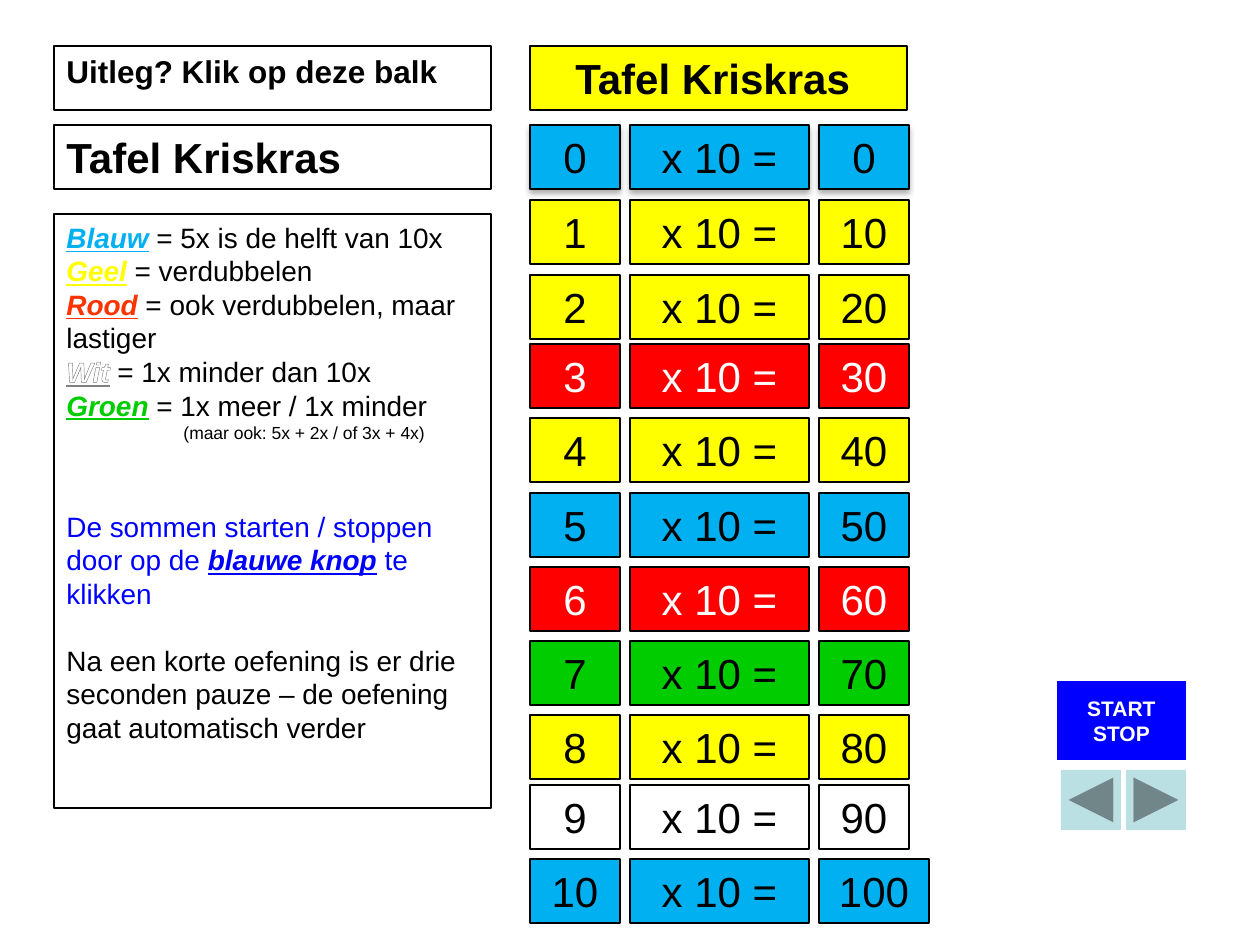
from lxml.etree import SubElement
from pptx import Presentation
from pptx.dml.color import RGBColor
from pptx.enum.shapes import MSO_SHAPE
from pptx.enum.text import MSO_ANCHOR, PP_ALIGN
from pptx.oxml import parse_xml
from pptx.oxml.ns import qn, nsdecls
from pptx.util import Emu, Pt

SCALE = 914400 / 126
HUES = {
    "blue": "00B0F0", "yellow": "FFFF00", "red": "FF0000", "green": "00CC00",
    "white": "FFFFFF", "black": "000000", "rust": "FF3300", "navy": "0000FF",
    "mint": "BBE0E3", "gray": "808080",
}
ROWS = [
    (125, "blue"), (200, "yellow"), (275, "yellow"), (344, "red"),
    (418, "yellow"), (493, "blue"), (567, "red"), (641, "green"),
    (715, "yellow"), (785, "white"), (859, "blue"),
]
NOTES = [
    (0, 0, [("Blauw", "blue", True, 16), (" = 5x is de helft van 10x", "black", False, 16)]),
    (0, 0, [("Geel", "yellow", True, 16), (" = verdubbelen", "black", False, 16)]),
    (0, 0, [("Rood", "rust", True, 16),
            (" = ook verdubbelen, maar lastiger", "black", False, 16)]),
    (0, 0, [("Wit", "white", True, 16), (" = 1x minder dan 10x", "black", False, 16)]),
    (0, 0, [("Groen", "green", True, 16), (" = 1x meer / 1x minder", "black", False, 16)]),
    (0, 117, [("(maar ook: 5x + 2x / of 3x + 4x)", "black", False, 10)]),
    (38, 0, [("De sommen starten / stoppen door op de ", "navy", False, 16),
             ("blauwe knop", "navy", True, 16), (" te klikken", "navy", False, 16)]),
    (19, 0, [("Na een korte oefening is er drie seconden pauze – de oefening "
              "gaat automatisch verder", "black", False, 16)]),
]


def px(num):
    return Emu(round(num * SCALE))


def color(name):
    return RGBColor.from_string(HUES[name])


def place(shape, left, top, width, height):
    shape.left, shape.top = px(left), px(top)
    shape.width, shape.height = px(width), px(height)


def paint(shape, fill, line=0.75):
    if fill:
        shape.fill.solid()
        shape.fill.fore_color.rgb = color(fill)
    else:
        shape.fill.background()
    if line:
        shape.line.color.rgb = color("black")
        shape.line.width = Pt(line)
    else:
        shape.line.fill.background()


def style(run, size, hue, bold=False):
    font = run.font
    font.name, font.size, font.bold = "Arial", Pt(size), bold
    font.color.rgb = color(hue)


def write(shape, text, size, hue="black", bold=False, align=PP_ALIGN.CENTER,
          anchor=MSO_ANCHOR.TOP):
    frame = shape.text_frame
    frame.text = text
    frame.word_wrap = True
    frame.vertical_anchor = anchor
    for para in frame.paragraphs:
        para.alignment = align
        for run in para.runs:
            style(run, size, hue, bold)


def add_box(slide, area, fill, line=0.75, kind=MSO_SHAPE.RECTANGLE):
    shape = slide.shapes.add_shape(kind, *map(px, area))
    shape.shadow.inherit = False
    paint(shape, fill, line)
    return shape


def add_shade(shape):
    props = shape.element.spPr
    props.remove(props.find(qn("a:effectLst")))
    props.append(parse_xml(
        f'<a:effectLst {nsdecls("a")}>'
        '<a:outerShdw blurRad="44450" dist="27940" dir="5400000" rotWithShape="0">'
        f'<a:srgbClr val="{HUES["black"]}"><a:alpha val="32000"/></a:srgbClr>'
        '</a:outerShdw></a:effectLst>'))


def add_rim(run):
    line = parse_xml(f'<a:ln {nsdecls("a")} w="12700"/>')
    fill = SubElement(line, qn("a:solidFill"))
    SubElement(fill, qn("a:srgbClr"), val=HUES["gray"])
    run.font._element.insert(0, line)


def add_title(slide):
    title = slide.shapes.title
    place(title, 530, 46, 377, 64)
    paint(title, "yellow")
    write(title, "Tafel Kriskras ", 24, bold=True)


def add_sums(slide):
    for num, (top, fill) in enumerate(ROWS):
        total = num * 10
        wide = 110 if total == 100 else 90
        hue = "white" if fill == "red" else "black"
        cells = [(530, 90, str(num)), (630, 179, "x 10 ="), (819, wide, str(total))]
        for left, width, text in cells:
            box = add_box(slide, (left, top, width, 64), fill)
            write(box, text, 24, hue)
            if num == 0:
                add_shade(box)


def add_notes(slide):
    box = add_box(slide, (54, 214, 437, 594), "white", 1.5)
    frame = box.text_frame
    frame.word_wrap = True
    frame.vertical_anchor = MSO_ANCHOR.TOP
    for spot, (gap, indent, parts) in enumerate(NOTES):
        para = frame.add_paragraph() if spot else frame.paragraphs[0]
        para.alignment = PP_ALIGN.LEFT
        para.space_before = Pt(gap)
        if indent:
            para._p.get_or_add_pPr().set("marL", str(px(indent)))
        for text, hue, strong, size in parts:
            run = para.add_run()
            run.text = text
            style(run, size, hue, strong)
            run.font.italic = run.font.underline = strong
            if hue == "white":
                add_rim(run)


def add_keys(slide):
    start = add_box(slide, (1057, 681, 129, 79), "navy", 0,
                    MSO_SHAPE.ACTION_BUTTON_CUSTOM)
    write(start, "START\nSTOP", 12, "white", True, anchor=MSO_ANCHOR.MIDDLE)
    start.text_frame.word_wrap = False
    arrows = [(1061, MSO_SHAPE.ACTION_BUTTON_BACK_OR_PREVIOUS),
              (1126, MSO_SHAPE.ACTION_BUTTON_FORWARD_OR_NEXT)]
    for left, kind in arrows:
        add_box(slide, (left, 770, 60, 60), "mint", 0, kind)


def main():
    deck = Presentation()
    deck.slide_width, deck.slide_height = px(1260), px(945)
    slide = deck.slides.add_slide(deck.slide_layouts[5])
    add_title(slide)
    add_sums(slide)
    add_notes(slide)
    heads = [(46, "Uitleg? Klik op deze balk", 18), (125, "Tafel Kriskras", 24)]
    for top, text, size in heads:
        box = add_box(slide, (54, top, 437, 64), None)
        write(box, text, size, bold=True, align=PP_ALIGN.LEFT)
    add_keys(slide)
    deck.save("out.pptx")


if __name__ == "__main__":
    main()
